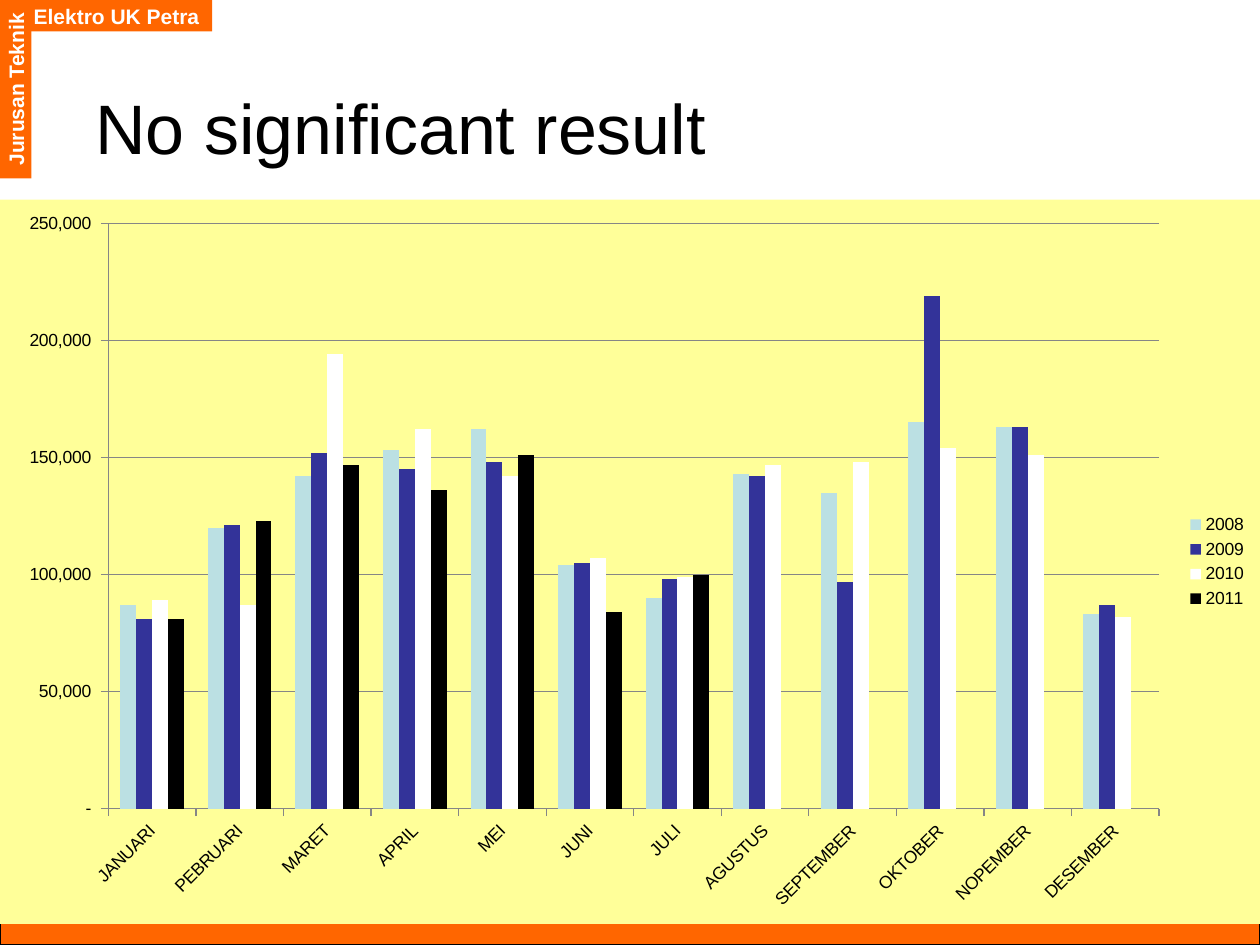
from dataclasses import dataclass

from lxml import etree
from pptx import Presentation
from pptx.chart.data import CategoryChartData
from pptx.dml.color import RGBColor
from pptx.enum.chart import XL_CHART_TYPE, XL_LEGEND_POSITION, XL_TICK_MARK
from pptx.enum.shapes import MSO_SHAPE
from pptx.enum.text import MSO_ANCHOR, PP_ALIGN
from pptx.oxml import parse_xml
from pptx.oxml.ns import nsdecls, qn
from pptx.util import Pt

RECTANGLE = MSO_SHAPE.RECTANGLE
COLUMNS = XL_CHART_TYPE.COLUMN_CLUSTERED
LEGEND_RIGHT = XL_LEGEND_POSITION.RIGHT
CROSS = XL_TICK_MARK.CROSS
MIDDLE = MSO_ANCHOR.MIDDLE
OUTSIDE = XL_TICK_MARK.OUTSIDE
LEFT = PP_ALIGN.LEFT
CENTER = PP_ALIGN.CENTER


@dataclass(frozen=True)
class Theme:
    font: str = "Arial"
    accent: str = "FF6600"
    ink: str = "000000"
    paper: str = "FFFFFF"
    chart_area: str = "FFFF99"
    rule: str = "868686"
    years: tuple = ("BBE0E3", "333399", "FFFFFF", "000000")
    title_size: int = 40
    tab_size: int = 12
    chart_size: int = 10


THEME = Theme()
MONTHS = (
    "JANUARI", "PEBRUARI", "MARET", "APRIL", "MEI", "JUNI",
    "JULI", "AGUSTUS", "SEPTEMBER", "OKTOBER", "NOPEMBER", "DESEMBER",
)
THOUSANDS_BY_YEAR = {
    "2008": (87, 120, 142, 153, 162, 104, 90, 143, 135, 165, 163, 83),
    "2009": (81, 121, 152, 145, 148, 105, 98, 142, 97, 219, 163, 87),
    "2010": (89, 87, 194, 162, 142, 107, 99, 147, 148, 154, 151, 82),
    "2011": (81, 123, 147, 136, 151, 84, 100) + (None,) * 5,
}


def set_attributes(target, values):
    """Set each named attribute of the target."""
    for name, value in values.items():
        setattr(target, name, value)


def style_font(font, size, color, bold=False):
    """Give a font its face, size, weight and colour."""
    set_attributes(font, {"name": THEME.font, "size": Pt(size), "bold": bold})
    font.color.rgb = RGBColor.from_string(color)


def write_text(shape, wording, size, color, alignment, bold=False, wrap=True):
    """Write one styled, vertically centred line in a shape."""
    frame = shape.text_frame
    set_attributes(frame, {"word_wrap": wrap, "vertical_anchor": MIDDLE})
    line = frame.paragraphs[0]
    set_attributes(line, {"text": wording, "alignment": alignment})
    style_font(line.runs[0].font, size, color, bold)


def add_bar(slide, box, outline=None):
    """Add an accent rectangle with an optional outline."""
    bar = slide.shapes.add_shape(RECTANGLE, *map(Pt, box))
    bar.shadow.inherit = False
    bar.fill.solid()
    bar.fill.fore_color.rgb = RGBColor.from_string(THEME.accent)
    if outline:
        bar.line.color.rgb = RGBColor.from_string(outline)
        bar.line.width = Pt(0.75)
    else:
        bar.line.fill.background()
    return bar


def add_tab(slide, box, wording, rotation=0):
    """Add a department tab at the slide corner."""
    tab = add_bar(slide, box)
    tab.rotation = rotation
    write_text(tab, wording, THEME.tab_size, THEME.paper, CENTER, True, False)


def add_title(slide, box, wording):
    """Add the slide title."""
    title = slide.shapes.add_textbox(*map(Pt, box))
    write_text(title, wording, THEME.title_size, THEME.ink, LEFT)


def style_axis(axis, values):
    """Apply axis settings and the thin rule colour."""
    set_attributes(axis, values)
    lines = [axis.format.line]
    if axis.has_major_gridlines:
        lines.append(axis.major_gridlines.format.line)
    for line in lines:
        line.color.rgb = RGBColor.from_string(THEME.rule)
        line.width = Pt(0.75)


def lay_out_chart(chart):
    """Fill the chart area, place the plot and slant the months."""
    root = chart.element
    root.find(qn("c:chart")).addnext(parse_xml(
        f'<c:spPr {nsdecls("c", "a")}><a:solidFill><a:srgbClr val="{THEME.chart_area}"/>'
        "</a:solidFill><a:ln><a:noFill/></a:ln></c:spPr>"))
    plot_area = root.find(".//" + qn("c:plotArea"))
    for old in plot_area.findall(qn("c:layout")):
        plot_area.remove(old)
    layout = etree.Element(qn("c:layout"))
    manual = etree.SubElement(layout, qn("c:manualLayout"))
    settings = {"layoutTarget": "inner", "xMode": "edge", "yMode": "edge",
                "x": 0.086, "y": 0.033, "w": 0.834, "h": 0.808}
    for name, value in settings.items():
        etree.SubElement(manual, qn("c:" + name)).set("val", str(value))
    plot_area.insert(0, layout)
    months = plot_area.find(qn("c:catAx"))
    months.find(qn("c:txPr")).find(qn("a:bodyPr")).set("rot", "-2700000")


def add_monthly_chart(slide, box):
    """Add the monthly column chart with one series per year."""
    data = CategoryChartData(number_format="#,##0")
    data.categories = MONTHS
    for year, thousands in THOUSANDS_BY_YEAR.items():
        data.add_series(year, [None if n is None else n * 1000 for n in thousands])
    chart = slide.shapes.add_chart(COLUMNS, *map(Pt, box), data).chart
    set_attributes(chart, {"has_title": False, "has_legend": True})
    style_font(chart.font, THEME.chart_size, THEME.ink)
    set_attributes(chart.legend, {"position": LEGEND_RIGHT, "include_in_layout": False})
    plot = chart.plots[0]
    set_attributes(plot, {"gap_width": 150, "overlap": 0, "vary_by_categories": False})
    for series, color in zip(plot.series, THEME.years):
        series.format.fill.solid()
        series.format.fill.fore_color.rgb = RGBColor.from_string(color)
    style_axis(chart.category_axis, {"major_tick_mark": OUTSIDE})
    style_axis(chart.value_axis, {
        "has_major_gridlines": True, "major_tick_mark": CROSS,
        "minimum_scale": 0, "maximum_scale": 250000, "major_unit": 50000})
    set_attributes(chart.value_axis.tick_labels, {
        "number_format": '#,##0_);(#,##0);"-"_)', "number_format_is_linked": False})
    style_font(chart.category_axis.tick_labels.font, THEME.chart_size, THEME.ink)
    lay_out_chart(chart)


def main():
    """Build and save the slide."""
    deck = Presentation()
    set_attributes(deck, {"slide_width": Pt(720), "slide_height": Pt(540)})
    slide = deck.slides.add_slide(deck.slide_layouts[6])
    add_bar(slide, (0, 492, 720, 48), THEME.ink)
    add_tab(slide, (12, 0, 109.25, 18), "Elektro UK Petra")
    add_tab(slide, (-42, 42, 102, 18), "Jurusan Teknik", 270)
    add_title(slide, (47.5, 37.5, 551, 70), "No significant result")
    add_monthly_chart(slide, (0, 114, 720, 414))
    deck.save("out.pptx")


if __name__ == "__main__":
    main()
